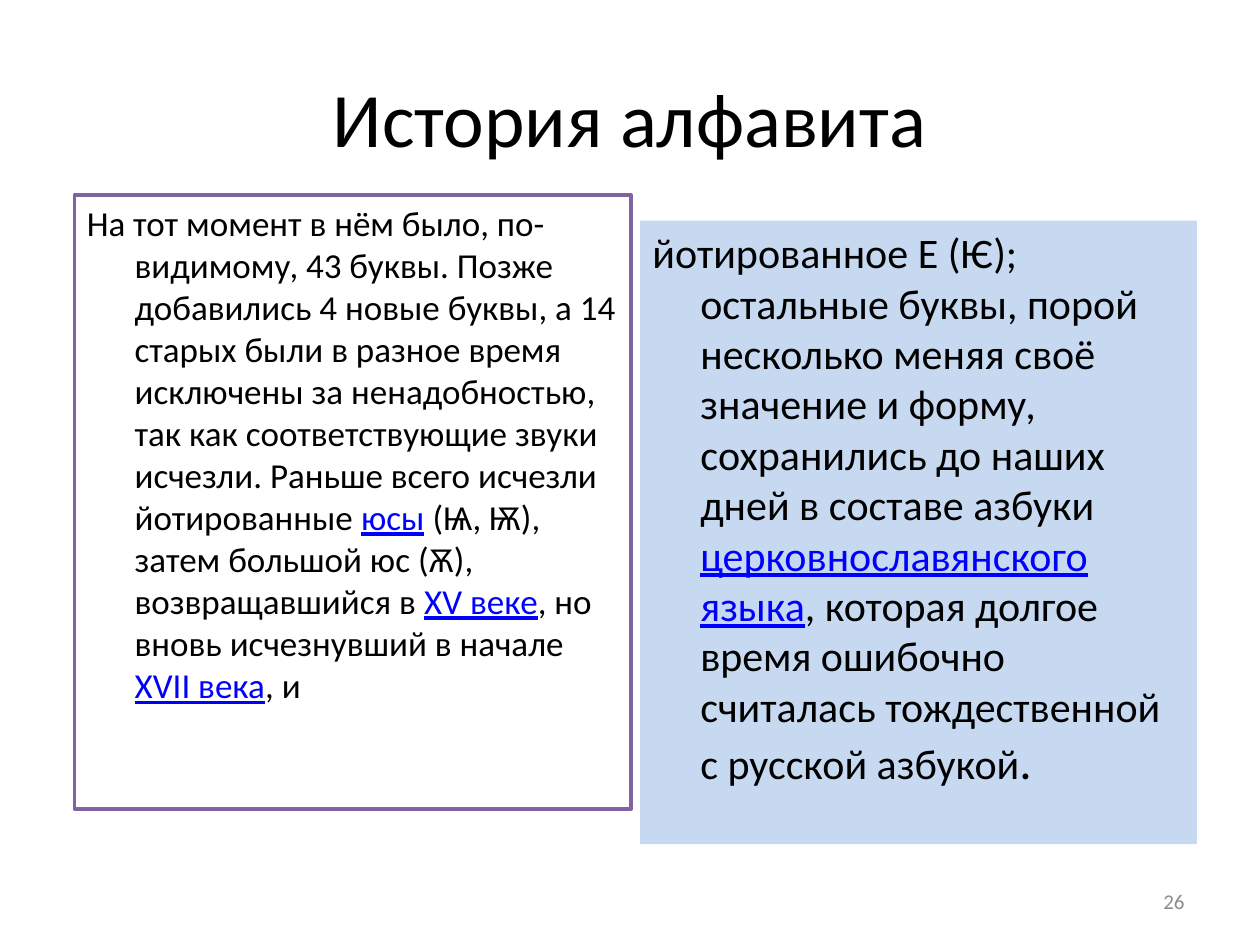
from typing import NamedTuple, Optional

from pptx import Presentation
from pptx.dml.color import RGBColor
from pptx.enum.shapes import MSO_SHAPE
from pptx.enum.text import MSO_ANCHOR, PP_ALIGN
from pptx.util import Pt

PX = 9144  # EMU per px, 100 px to the inch
FONT = "Calibri"
BLACK = RGBColor(0x00, 0x00, 0x00)
WHITE = RGBColor(0xFF, 0xFF, 0xFF)
LINK_BLUE = RGBColor(0x00, 0x00, 0xFF)
PURPLE = RGBColor(0x80, 0x64, 0xA2)
PALE_BLUE = RGBColor(0xC6, 0xD9, 0xF1)
GRAY = RGBColor(0x8C, 0x8C, 0x8C)
LEFT, CENTER, RIGHT = PP_ALIGN.LEFT, PP_ALIGN.CENTER, PP_ALIGN.RIGHT
TOP, MIDDLE = MSO_ANCHOR.TOP, MSO_ANCHOR.MIDDLE
RECTANGLE = MSO_SHAPE.RECTANGLE
TITLE_ONLY = 5
HANGING = 38


class Box(NamedTuple):
    left: int
    top: int
    width: int
    height: int

    def emu(self) -> list[int]:
        return [v * PX for v in self]


class Span(NamedTuple):
    text: str
    size: int
    link: bool = False


class Panel(NamedTuple):
    box: Box
    fill: RGBColor
    line: Optional[RGBColor]
    spans: list[Span]


PANELS = [
    Panel(Box(59, 155, 442, 487), WHITE, PURPLE, [
        Span("На тот момент в нём было, по-видимому, 43 буквы. Позже добавились "
             "4 новые буквы, а 14 старых были в разное время исключены за "
             "ненадобностью, так как соответствующие звуки исчезли. Раньше "
             "всего исчезли йотированные ", 20),
        Span("юсы", 20, True),
        Span(" (Ѩ, Ѭ), затем большой юс (Ѫ), возвращавшийся в ", 20),
        Span("XV веке", 20, True),
        Span(", но вновь исчезнувший в начале ", 20),
        Span("XVII века", 20, True),
        Span(", и", 20),
    ]),
    Panel(Box(508, 175, 442, 495), PALE_BLUE, None, [
        Span("йотированное Е (Ѥ); остальные буквы, порой несколько меняя своё "
             "значение и форму, сохранились до наших дней в составе азбуки ", 24),
        Span("церковнославянского языка", 24, True),
        Span(", которая долгое время ошибочно считалась тождественной "
             "с русской азбукой", 24),
        Span(".", 28),
    ]),
]


def write(tf, spans: list[Span], align, anchor, color: RGBColor = BLACK):
    """Fill the frame's first paragraph run by run and return it."""
    tf.word_wrap = True
    tf.vertical_anchor = anchor
    p = tf.paragraphs[0]
    p.alignment = align
    for span in spans:
        r = p.add_run()
        r.text = span.text
        r.font.name = FONT
        r.font.size = Pt(span.size)
        r.font.color.rgb = LINK_BLUE if span.link else color
        if span.link:
            r.font.underline = True
    return p


def add_panel(s, panel: Panel) -> None:
    sp = s.shapes.add_shape(RECTANGLE, *panel.box.emu())
    sp.shadow.inherit = False
    sp.fill.solid()
    sp.fill.fore_color.rgb = panel.fill
    if panel.line is None:
        sp.line.fill.background()
    else:
        sp.line.color.rgb = panel.line
        sp.line.width = Pt(2)
    p = write(sp.text_frame, panel.spans, LEFT, TOP)
    p.space_before = Pt(panel.spans[0].size * 0.2)
    pPr = p._p.get_or_add_pPr()
    pPr.set("marL", str(HANGING * PX))
    pPr.set("indent", str(-HANGING * PX))


def main() -> None:
    prs = Presentation()
    prs.slide_width, prs.slide_height = 1000 * PX, 750 * PX
    s = prs.slides.add_slide(prs.slide_layouts[TITLE_ONLY])

    title = s.shapes.title
    title.left, title.top, title.width, title.height = Box(50, 30, 900, 125).emu()
    write(title.text_frame, [Span("История алфавита", 44)], CENTER, MIDDLE)

    for panel in PANELS:
        add_panel(s, panel)

    number = s.shapes.add_textbox(*Box(717, 695, 233, 40).emu())
    write(number.text_frame, [Span("26", 12)], RIGHT, MIDDLE, GRAY)

    prs.save("out.pptx")


if __name__ == "__main__":
    main()
